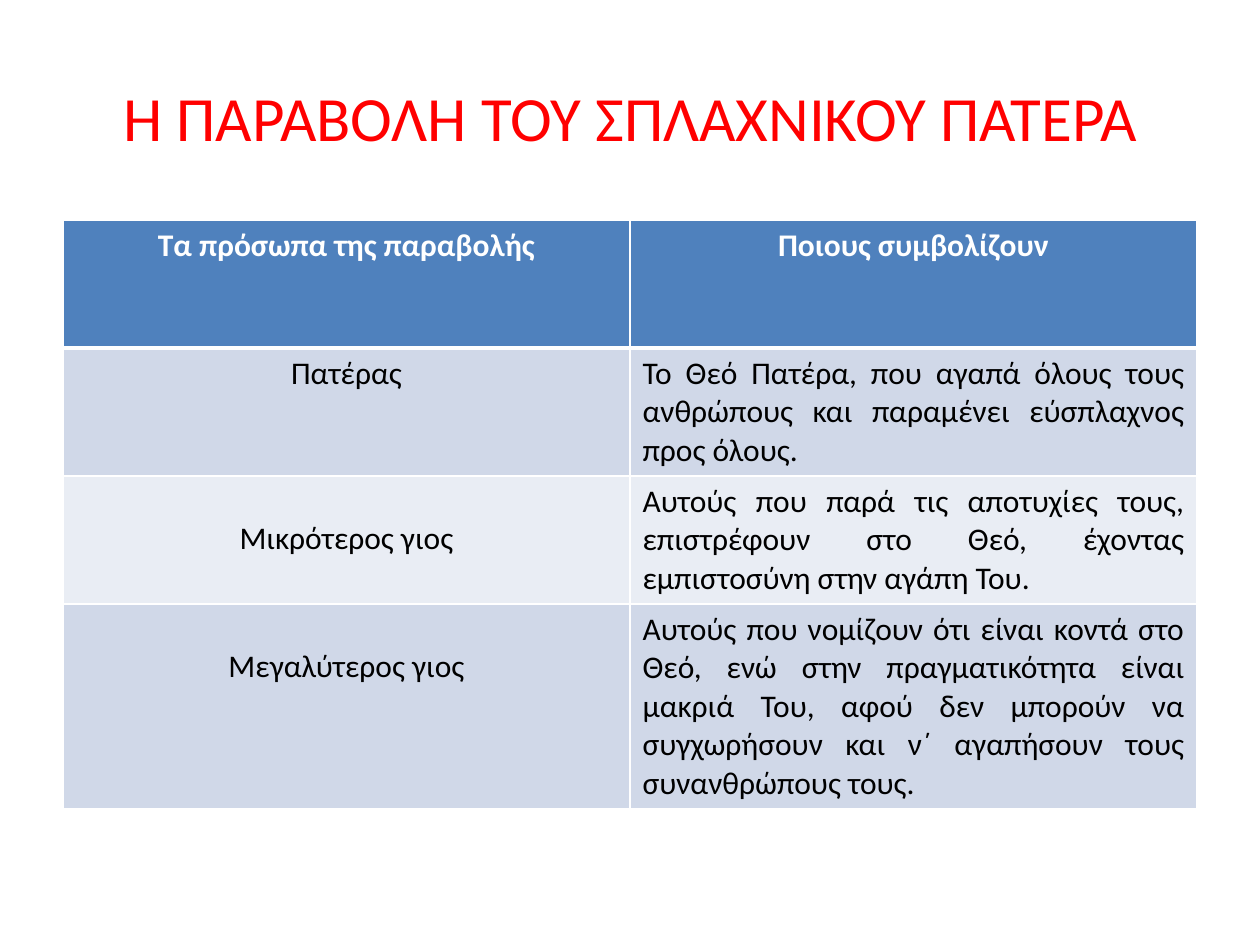
from lxml.etree import SubElement
from pptx import Presentation
from pptx.dml.color import RGBColor
from pptx.enum.text import MSO_ANCHOR as Anchor, PP_ALIGN as Align
from pptx.oxml.ns import qn
from pptx.util import Pt

PX = 914400 / 126
FONT = "Calibri"
RED = RGBColor(0xFF, 0x00, 0x00)
WHITE = RGBColor(0xFF, 0xFF, 0xFF)
BLACK = RGBColor(0x00, 0x00, 0x00)
BLUE = RGBColor(0x4F, 0x81, 0xBD)
BANDS = RGBColor(0xE9, 0xED, 0xF4), RGBColor(0xD0, 0xD8, 0xE8)

TITLE = "Η ΠΑΡΑΒΟΛΗ ΤΟΥ ΣΠΛΑΧΝΙΚΟΥ ΠΑΤΕΡΑ"
ROWS = [
    ("Τα πρόσωπα της παραβολής", "Ποιους συμβολίζουν"),
    ("Πατέρας", "Το Θεό Πατέρα, που αγαπά όλους τους ανθρώπους και "
     "παραμένει εύσπλαχνος προς όλους."),
    ("Μικρότερος γιος", "Αυτούς που παρά τις αποτυχίες τους, επιστρέφουν "
     "στο Θεό, έχοντας εμπιστοσύνη στην αγάπη Του."),
    ("Μεγαλύτερος γιος", "Αυτούς που νομίζουν ότι είναι κοντά στο Θεό, ενώ "
     "στην πραγματικότητα είναι μακριά Του, αφού δεν μπορούν να "
     "συγχωρήσουν και ν΄ αγαπήσουν τους συνανθρώπους τους."),
]
ROW_HEIGHTS = 128, 128, 128, 205
LOWERED_ROWS = 2, 3
LOWERED_MARGIN = 44


def px(length):
    return round(length * PX)


def write(frame, text, size=18, color=BLACK, bold=False, align=Align.CENTER):
    para = frame.paragraphs[0]
    para.alignment = align
    span = para.add_run()
    span.text = text
    span.font.name = FONT
    span.font.size = Pt(size)
    span.font.bold = bold
    span.font.color.rgb = color


def add_title(page):
    box = page.shapes.title
    box.left, box.top, box.width, box.height = map(px, (63, 38, 1134, 157))
    box.text_frame.vertical_anchor = Anchor.MIDDLE
    write(box.text_frame, TITLE, size=36, color=RED)


def set_borders(cell, top=1, bottom=1):
    properties = cell._tc.get_or_add_tcPr()
    for side, width in (("L", 1), ("R", 1), ("T", top), ("B", bottom)):
        line = SubElement(properties, qn(f"a:ln{side}"), w=str(Pt(width)))
        fill = SubElement(line, qn("a:solidFill"))
        SubElement(fill, qn("a:srgbClr"), val=str(WHITE))


def fill_cell(cell, text, row, column):
    header = row == 0
    set_borders(cell, top=3 if row == 1 else 1, bottom=3 if header else 1)
    cell.fill.solid()
    cell.fill.fore_color.rgb = BLUE if header else BANDS[row % 2]
    if column == 0 and row in LOWERED_ROWS:
        cell.margin_top = px(LOWERED_MARGIN)
    write(cell.text_frame, text, color=WHITE if header else BLACK, bold=header,
          align=Align.CENTER if header or column == 0 else Align.JUSTIFY)


def add_people_table(page):
    table = page.shapes.add_table(len(ROWS), 2, px(63), px(220), px(1134),
                                  px(sum(ROW_HEIGHTS))).table
    for row, (texts, height) in enumerate(zip(ROWS, ROW_HEIGHTS)):
        table.rows[row].height = px(height)
        for column, text in enumerate(texts):
            fill_cell(table.cell(row, column), text, row, column)


def main():
    deck = Presentation()
    deck.slide_width, deck.slide_height = px(1260), px(945)
    page = deck.slides.add_slide(deck.slide_layouts[5])
    add_title(page)
    add_people_table(page)
    deck.save("out.pptx")


if __name__ == "__main__":
    main()
